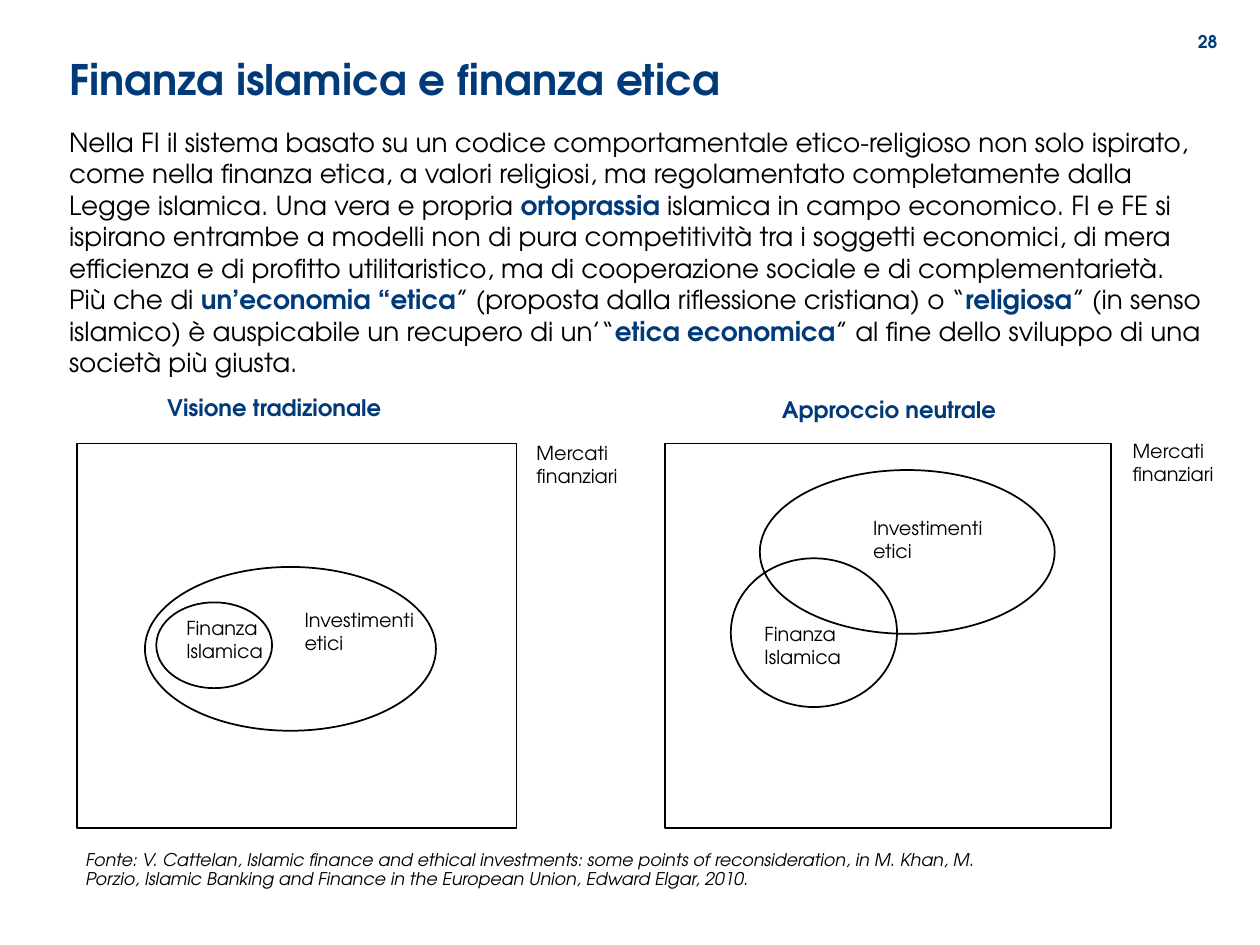
from pptx import Presentation
from pptx.dml.color import RGBColor
from pptx.enum.shapes import MSO_SHAPE
from pptx.enum.text import MSO_ANCHOR, PP_ALIGN
from pptx.util import Pt

RECTANGLE = MSO_SHAPE.RECTANGLE
ELLIPSE = MSO_SHAPE.OVAL
LEFT = PP_ALIGN.LEFT
CENTER = PP_ALIGN.CENTER
TOP = MSO_ANCHOR.TOP
MIDDLE = MSO_ANCHOR.MIDDLE
BLACK = RGBColor(0x00, 0x00, 0x00)
NAVY = RGBColor(0x00, 0x3A, 0x79)
FONT = "TeX Gyre Adventor"

BODY = [
    ("Nella FI il sistema basato su un codice comportamentale etico-religioso non solo "
     "ispirato, come nella finanza etica, a valori religiosi, ma regolamentato "
     "completamente dalla Legge islamica. Una vera e propria ", False),
    ("ortoprassia", True),
    (" islamica in campo economico. FI e FE si ispirano entrambe a modelli non di pura "
     "competitività tra i soggetti economici, di mera efficienza e di profitto "
     "utilitaristico, ma di cooperazione sociale e di complementarietà. Più che di ", False),
    ("un’economia “etica", True),
    ("” (proposta dalla riflessione cristiana) o “", False),
    ("religiosa", True),
    ("” (in senso islamico) è auspicabile un recupero di un’“", False),
    ("etica economica", True),
    ("” al fine dello sviluppo di una società più giusta.", False),
]
SOURCE = ("Fonte: V. Cattelan, Islamic finance and ethical investments: some points of "
          "reconsideration, in M. Khan, M. Porzio, Islamic Banking and Finance in the "
          "European Union, Edward Elgar, 2010.")

MARKETS = "Mercati finanziari"
ISLAMIC = "Finanza Islamica"
ETHICAL = "Investimenti etici"
DIAGRAMS = [
    {
        "outlines": [
            (RECTANGLE, (43.9, 253.4, 251.3, 219.6)),
            (ELLIPSE, (82.8, 324, 166.3, 93.6)),
            (ELLIPSE, (89.3, 344.2, 66.2, 49)),
        ],
        "labels": [
            (ISLAMIC, (99.4, 348.5, 62.6, 40.3)),
            (ETHICAL, (167, 344.2, 82.1, 40.3)),
            (MARKETS, (299.5, 248.4, 62.6, 40.3)),
        ],
    },
    {
        "outlines": [
            (RECTANGLE, (380.2, 253.4, 254.9, 219.6)),
            (ELLIPSE, (434.2, 268.6, 168.5, 93.6)),
            (ELLIPSE, (417.6, 319, 95, 85)),
        ],
        "labels": [
            (MARKETS, (640.1, 247.7, 63.4, 40.3)),
            (ISLAMIC, (429.8, 352.1, 61.9, 40.3)),
            (ETHICAL, (491.8, 291.6, 85.7, 40.3)),
        ],
    },
]


class SlideWriter:
    def __init__(self, page):
        self.page = page
        self.shapes = page.shapes

    def start_group(self):
        self.shapes = self.page.shapes.add_group_shape().shapes

    def text(self, frame, spans, size, color=BLACK, bold=None, italic=None,
             align=LEFT, anchor=TOP, spacing=1.0):
        box = self.shapes.add_textbox(*map(Pt, frame))
        box.text_frame.word_wrap = True
        box.text_frame.vertical_anchor = anchor
        para = box.text_frame.paragraphs[0]
        para.alignment = align
        para.line_spacing = spacing
        para.font.name = FONT
        para.font.size = Pt(size)
        para.font.color.rgb = color
        para.font.bold = bold
        para.font.italic = italic
        for content, emphasized in spans:
            span = para.add_run()
            span.text = content
            if emphasized:
                span.font.bold = True
                span.font.color.rgb = NAVY

    def line(self, frame, content, size, **style):
        self.text(frame, [(content, False)], size, **style)

    def heading(self, frame, content):
        self.line(frame, content, 13, color=NAVY, bold=True, align=CENTER, spacing=0.9)

    def outline(self, kind, frame):
        shape = self.shapes.add_shape(kind, *map(Pt, frame))
        shape.shadow.inherit = False
        shape.fill.background()
        shape.line.color.rgb = BLACK
        shape.line.width = Pt(1)

    def diagram(self, outlines, labels):
        self.start_group()
        for kind, frame in outlines:
            self.outline(kind, frame)
        for content, frame in labels:
            self.line(frame, content, 11)


def main():
    deck = Presentation()
    deck.slide_width = Pt(720)
    deck.slide_height = Pt(540)
    writer = SlideWriter(deck.slides.add_slide(deck.slide_layouts[6]))

    writer.line((32.4, 28.8, 617, 36), "Finanza islamica e finanza etica", 24,
                color=NAVY, bold=True, anchor=MIDDLE, spacing=0.9)
    writer.line((673.9, 14.4, 32.4, 28.8), "28", 10,
                color=NAVY, bold=True, align=CENTER)
    writer.text((32.4, 68.4, 664.6, 50.4), BODY, 15, spacing=Pt(18))
    writer.heading((64.1, 223.2, 185, 28.1), "Visione tradizionale")
    writer.heading((415.4, 224.6, 185, 28.1), "Approccio neutrale")
    writer.line((41.8, 483.1, 524.9, 26.6), SOURCE, 10, italic=True, spacing=0.9)
    for diagram in DIAGRAMS:
        writer.diagram(**diagram)

    deck.save("out.pptx")


if __name__ == "__main__":
    main()
